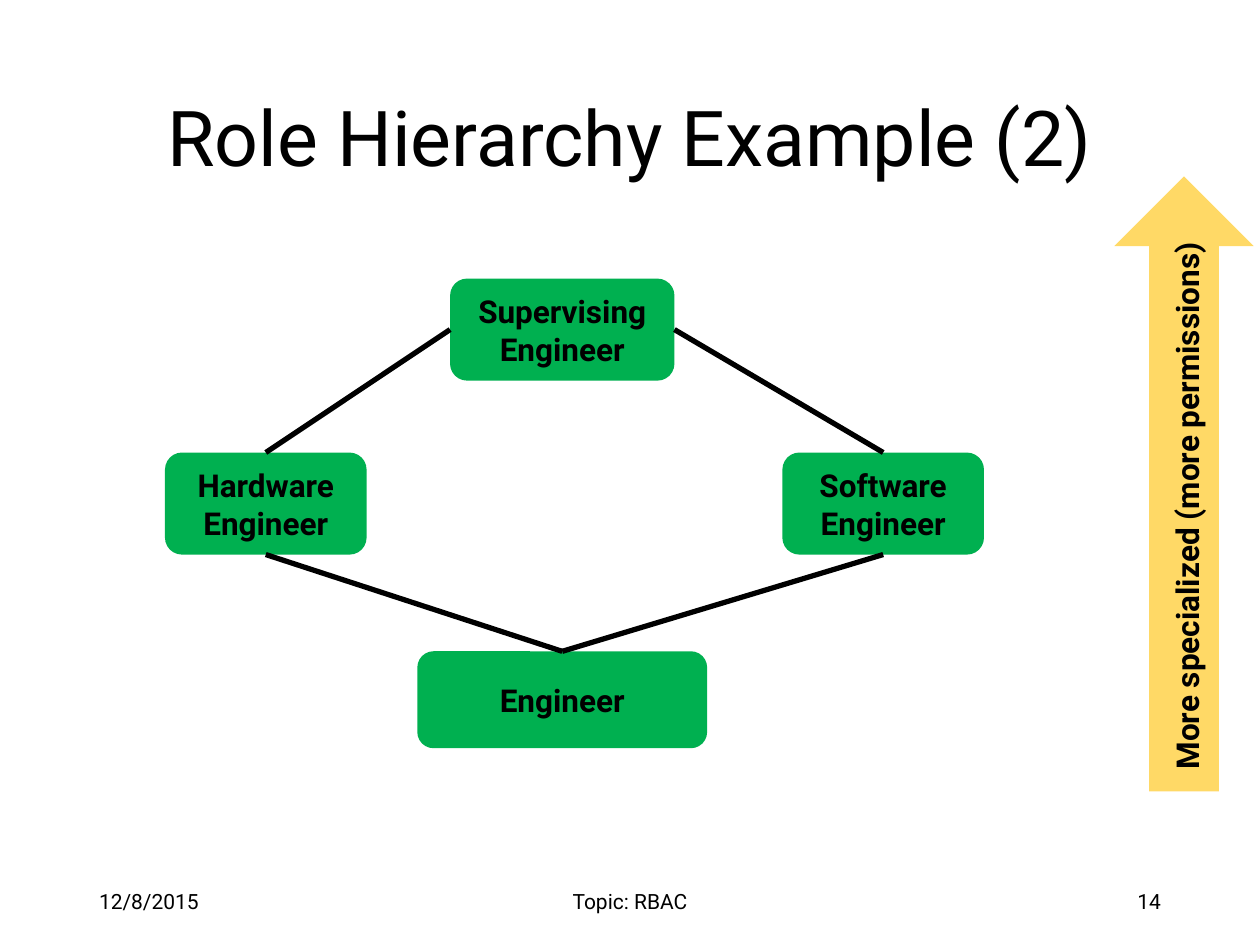
from lxml.etree import SubElement
from pptx import Presentation
from pptx.dml.color import RGBColor
from pptx.enum.shapes import MSO_CONNECTOR, MSO_SHAPE
from pptx.enum.text import MSO_ANCHOR, PP_ALIGN
from pptx.oxml.ns import qn
from pptx.util import Pt

BLACK = RGBColor(0x00, 0x00, 0x00)
GREEN = RGBColor(0x00, 0xB0, 0x50)
GOLD = RGBColor(0xFF, 0xD9, 0x66)
FONT = "Roboto"
TOP, LEFT, BOTTOM, RIGHT = range(4)


def write_text(shape, text, size=18, bold=False, align=PP_ALIGN.CENTER,
               anchor=MSO_ANCHOR.MIDDLE, spacing=None):
    """Write the lines of text into a shape as formatted paragraphs."""
    frame = shape.text_frame
    frame.text = text
    frame.word_wrap = True
    frame.vertical_anchor = anchor
    for paragraph in frame.paragraphs:
        paragraph.alignment = align
        if spacing:
            paragraph.line_spacing = spacing
        for run in paragraph.runs:
            run.font.name = FONT
            run.font.size = Pt(size)
            run.font.bold = bold
            run.font.color.rgb = BLACK


def add_block(slide, kind, fill, left, top, width, height):
    """Add a flat filled shape without outline."""
    block = slide.shapes.add_shape(kind, Pt(left), Pt(top), Pt(width), Pt(height))
    block.shadow.inherit = False
    block.fill.solid()
    block.fill.fore_color.rgb = fill
    block.line.fill.background()
    return block


def join_roles(slide, upper, upper_side, lower, lower_side):
    """Connect two roles with a thick black line."""
    link = slide.shapes.add_connector(MSO_CONNECTOR.STRAIGHT, 0, 0, 0, 0)
    link.begin_connect(upper, upper_side)
    link.end_connect(lower, lower_side)
    link.line.color.rgb = BLACK
    link.line.width = Pt(3)
    SubElement(link._element.spPr, qn("a:effectLst"))


def place_title(slide, left, top, width, height):
    """Move and format the title placeholder."""
    title = slide.shapes.title
    title.left, title.top = Pt(left), Pt(top)
    title.width, title.height = Pt(width), Pt(height)
    write_text(title, "Role Hierarchy Example (2)", size=44, spacing=0.9)


def place_footer(slide, left, top, width, height):
    """Place the date, topic and page number along a strip."""
    side, middle = 162, 243
    entries = [
        ("12/8/2015", 0, side, PP_ALIGN.LEFT),
        ("Topic: RBAC", (width - middle) / 2, middle, PP_ALIGN.CENTER),
        ("14", width - side, side, PP_ALIGN.RIGHT),
    ]
    for text, offset, entry_width, align in entries:
        entry = slide.shapes.add_textbox(
            Pt(left + offset), Pt(top), Pt(entry_width), Pt(height))
        write_text(entry, text, size=12, align=align)


def place_hierarchy(slide, left, top, width, height):
    """Place the diamond of roles and the links between them."""
    role_height, base_height, side_width = 58.3, 55.4, 115.2
    side_top = 99.4
    centre = 227

    def add_role(text, x, y, role_width, tall=role_height):
        """Add one role relative to the hierarchy box."""
        role = add_block(slide, MSO_SHAPE.ROUNDED_RECTANGLE, GREEN,
                         left + x, top + y, role_width, tall)
        write_text(role, text, bold=True)
        return role

    engineer = add_role("Engineer", centre - 82.8, height - base_height,
                        165.6, base_height)
    hardware = add_role("Hardware Engineer", 0, side_top, side_width)
    software = add_role("Software\nEngineer", width - side_width, side_top, side_width)
    supervisor = add_role("Supervising\nEngineer", centre - 64.1, 0, 128.2)

    for specialist, supervisor_side in ((hardware, LEFT), (software, RIGHT)):
        join_roles(slide, supervisor, supervisor_side, specialist, TOP)
        join_roles(slide, specialist, BOTTOM, engineer, TOP)


def place_scale(slide, left, top, width, height):
    """Place the upward arrow with its rotated caption."""
    add_block(slide, MSO_SHAPE.UP_ARROW, GOLD, left, top, width, height)
    length, thickness = 319, 28.8
    centre_x = left + width / 2 + 1.5
    centre_y = top + height / 2 + 10.8
    caption = slide.shapes.add_textbox(
        Pt(centre_x - length / 2), Pt(centre_y - thickness / 2),
        Pt(length), Pt(thickness))
    caption.rotation = 270
    write_text(caption, "More specialized (more permissions)", bold=True,
               align=PP_ALIGN.LEFT, anchor=MSO_ANCHOR.TOP)


def main():
    """Build the slide and save it."""
    deck = Presentation()
    deck.slide_width, deck.slide_height = Pt(720), Pt(540)
    slide = deck.slides.add_slide(deck.slide_layouts[5])
    place_title(slide, 49.5, 28.8, 621, 104.4)
    place_footer(slide, 49.5, 500.5, 621, 28.8)
    place_scale(slide, 636.8, 100.8, 79.6, 351.4)
    place_hierarchy(slide, 94.3, 159.2, 468, 268.4)
    deck.save("out.pptx")


if __name__ == "__main__":
    main()
